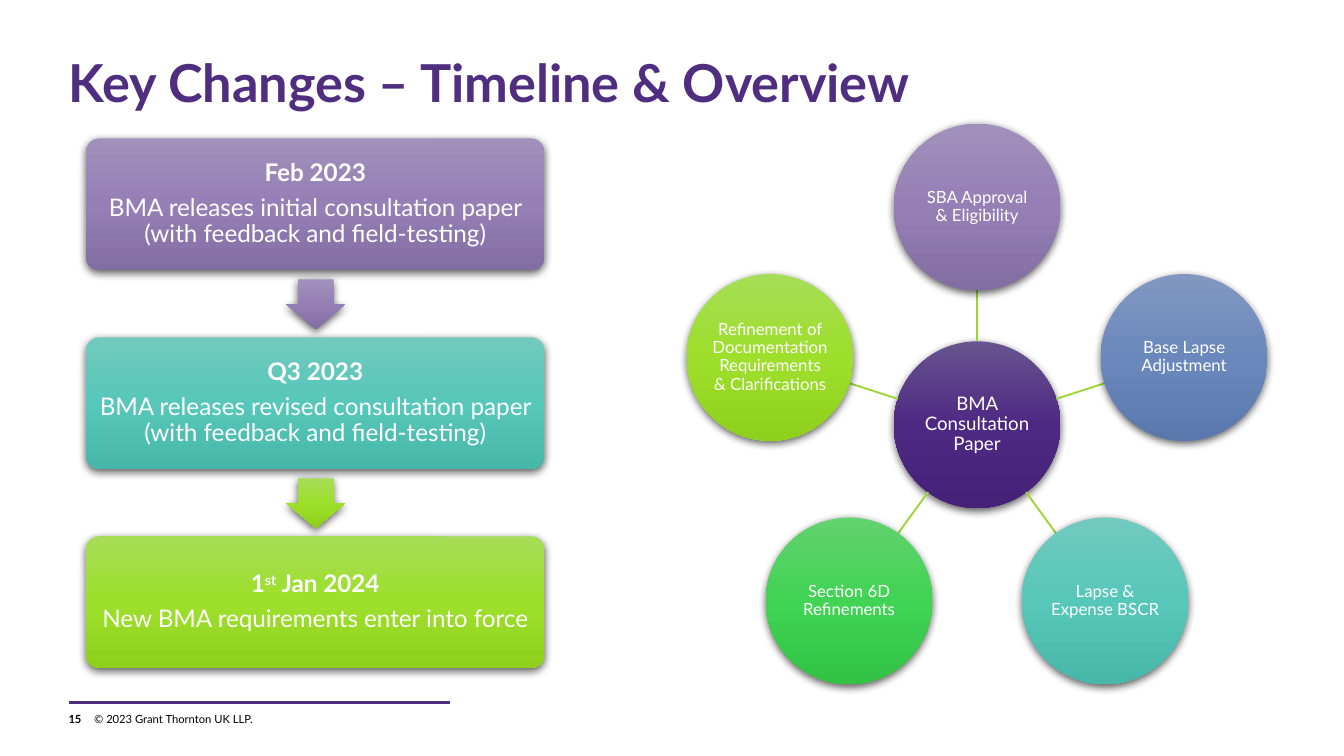
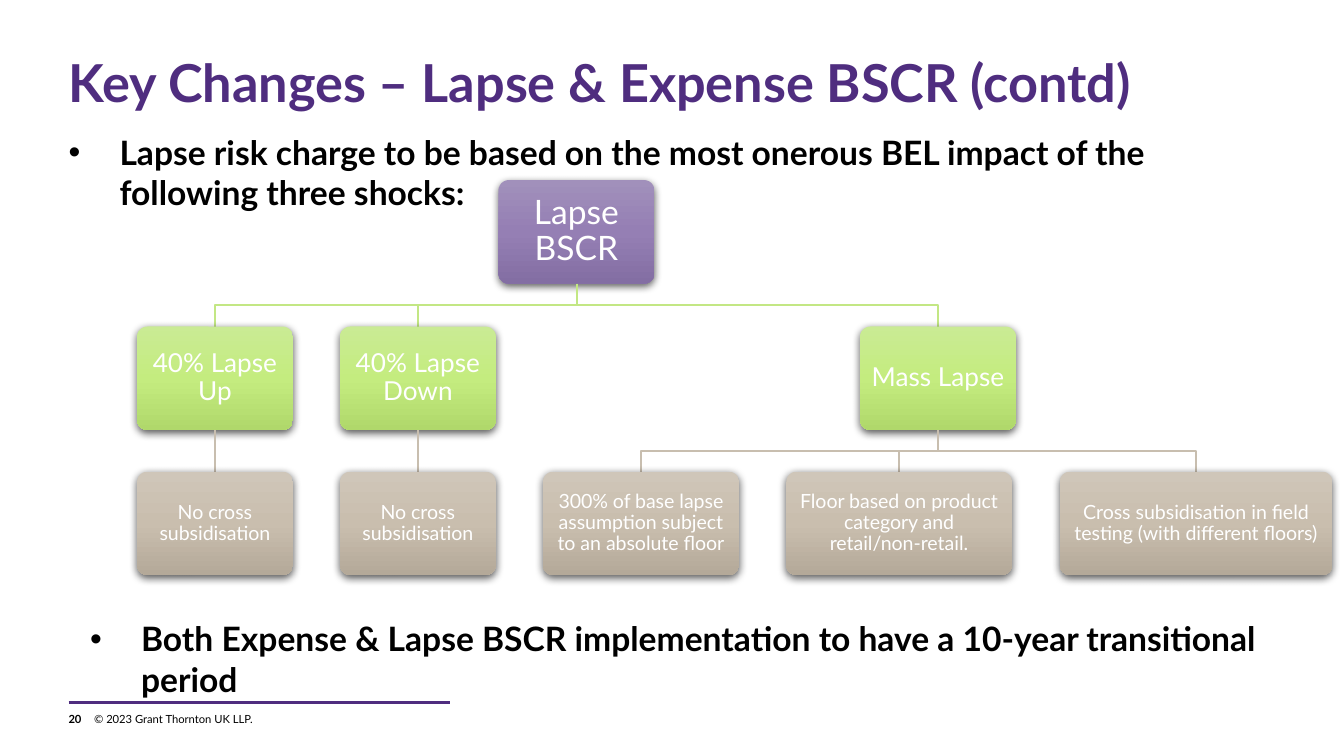
from copy import deepcopy
from math import cos, radians, sin

from lxml.etree import SubElement
from pptx import Presentation
from pptx.dml.color import RGBColor
from pptx.enum.shapes import MSO_CONNECTOR as Connector, MSO_SHAPE as Shape
from pptx.enum.text import MSO_ANCHOR as Anchor, PP_ALIGN as Align
from pptx.oxml.ns import qn
from pptx.util import Inches, Pt

FONT = "Lato"
BRAND = RGBColor(0x4F, 0x2D, 0x7F)
BLACK = RGBColor(0, 0, 0)
WHITE = RGBColor(0xFF, 0xFF, 0xFF)
LINK_GREEN = RGBColor(0x9B, 0xD7, 0x32)
LINK_LIGHT_GREEN = RGBColor(0xC3, 0xE7, 0x84)
LINK_SAND = RGBColor(0xC8, 0xBE, 0xAF)


def gradient(*codes):
    return [RGBColor.from_string(code) for code in codes]


DEEP_PURPLE = gradient("68548F", "4E2983", "452178")
PURPLE = gradient("A190BB", "957FB4", "836EA3")
BLUE = gradient("8197C1", "6B88BD", "5B78AC")
TEAL = gradient("72C9BF", "57C7BA", "47B7AA")
GREEN = gradient("63D26F", "41D353", "32C344")
LIME = gradient("A6DD57", "9DDF2A", "8ED01C")
LIGHT_LIME = gradient("CAEB94", "C4EC7F", "B0D86B")
SAND = gradient("CFC6B9", "C9BEAE", "B4A999")


def apply(target, formats):
    for name, value in formats.items():
        setattr(target, name, value)


def box(*lengths):
    return [Inches(length) for length in lengths]


def set_frame(frame, inset, anchor=Anchor.TOP):
    sides = ("left", "top", "right", "bottom")
    apply(frame, {f"margin_{side}": Inches(inset) for side in sides})
    apply(frame, {"word_wrap": True, "vertical_anchor": anchor})


def add_run(paragraph, text, size, color, bold=False, baseline=0):
    run = paragraph.add_run()
    run.text = text
    apply(run.font, {"name": FONT, "size": Pt(size), "bold": bold})
    run.font.color.rgb = color
    if baseline:
        run.font._element.set("baseline", str(baseline * 1000))


def add_text(slide, place, text, size, color=BLACK, bold=False, inset=0):
    """Add a text box with one paragraph, which is returned."""
    frame = slide.shapes.add_textbox(*box(*place)).text_frame
    set_frame(frame, inset)
    paragraph = frame.paragraphs[0]
    add_run(paragraph, text, size, color, bold)
    return paragraph


def add_bullet(slide, place, text, inset=0):
    paragraph = add_text(slide, place, text, 18, bold=True, inset=inset)
    properties = paragraph._p.get_or_add_pPr()
    properties.set("marL", str(Inches(0.38)))
    properties.set("indent", str(-Inches(0.38)))
    SubElement(properties, qn("a:buFont"), typeface="Arial")
    SubElement(properties, qn("a:buChar"), char="•")


def add_line(slide, start, end, color, width=1):
    line = slide.shapes.add_connector(Connector.STRAIGHT, *box(*start, *end))
    line.line.color.rgb = color
    line.line.width = Pt(width)
    SubElement(line._element.spPr, qn("a:effectLst"))


def add_elbow(slide, start, end, color):
    """Link a parent's foot to a child's head through their middle height."""
    if start[0] == end[0]:
        add_line(slide, start, end, color)
        return
    middle = (start[1] + end[1]) / 2
    builder = slide.shapes.build_freeform(*box(*start))
    corners = [(start[0], middle), (end[0], middle), end]
    builder.add_line_segments([box(*corner) for corner in corners], close=False)
    elbow = builder.convert_to_shape()
    elbow.shadow.inherit = False
    elbow.fill.background()
    elbow.line.color.rgb = color
    elbow.line.width = Pt(1)


def add_glossy(slide, kind, place, colors, adjustments=()):
    """Add a shape with a vertical three-colour gradient and a soft shadow."""
    shape = slide.shapes.add_shape(kind, *box(*place))
    for index, value in enumerate(adjustments):
        shape.adjustments[index] = value
    shape.line.fill.background()
    shape.fill.gradient()
    shape.fill.gradient_angle = 270
    properties = shape._element.spPr
    stops = properties.find(".//" + qn("a:gsLst"))
    stops.append(deepcopy(stops[-1]))
    for stop, color, position in zip(shape.fill.gradient_stops, colors, (0, 0.5, 1)):
        stop.color.rgb = color
        stop.position = position
    shape.shadow.inherit = False
    shadow = SubElement(properties.find(qn("a:effectLst")), qn("a:outerShdw"),
                        blurRad=str(Pt(4.5)), dist=str(Pt(1.5)),
                        dir="5400000", rotWithShape="0")
    black = SubElement(shadow, qn("a:srgbClr"), val="000000")
    SubElement(black, qn("a:alpha"), val="63000")
    return shape


def write_label(shape, paragraphs, size, inset):
    """Fill a shape with centred paragraphs, each a list of run tuples."""
    frame = shape.text_frame
    set_frame(frame, inset, Anchor.MIDDLE)
    for index, runs in enumerate(paragraphs):
        paragraph = frame.add_paragraph() if index else frame.paragraphs[0]
        apply(paragraph, {"alignment": Align.CENTER, "line_spacing": 0.9,
                          "space_after": Pt(0)})
        space = paragraph._p.pPr.find(qn("a:spcAft"))
        space.remove(space[0])
        SubElement(space, qn("a:spcPct"), val="35000")
        for text, *style in runs:
            add_run(paragraph, text, size, WHITE, *style)


def add_card(slide, place, colors, paragraphs, size, inset=0.05):
    card = add_glossy(slide, Shape.ROUNDED_RECTANGLE, place, colors, [0.1])
    write_label(card, paragraphs, size, inset)


def add_slide(presentation, title, number):
    """Add a slide with its title, footer rule, page number and copyright."""
    slide = presentation.slides.add_slide(presentation.slide_layouts[6])
    add_text(slide, (0.7, 5.3, 4.31, 0.1), "© 2023 Grant Thornton UK LLP.", 6)
    add_line(slide, (0.51, 5.23), (3.35, 5.23), BRAND, 1.5)
    heading = add_text(slide, (0.51, 0.43, 8.98, 0.87), title, 28, BRAND, True)
    heading.line_spacing = 0.9
    add_text(slide, (0.51, 5.3, 0.18, 0.1), str(number), 6, bold=True)
    return slide


def add_timeline(slide):
    steps = [
        (PURPLE, [("Feb 2023", True)],
         "BMA releases initial consultation paper (with feedback and field-testing)"),
        (TEAL, [("Q3 2023", True)],
         "BMA releases revised consultation paper (with feedback and field-testing)"),
        (LIME, [("1", True), ("st", True, 30), (" Jan 2024", True)],
         "New BMA requirements enter into force"),
    ]
    arrow_colors = [PURPLE, LIME]
    for index, (colors, date, event) in enumerate(steps):
        top = 1.03 + 1.48 * index
        add_card(slide, (0.64, top, 3.41, 0.98), colors, [date, [(event,)]], 13)
        if index < len(arrow_colors):
            add_glossy(slide, Shape.DOWN_ARROW, (2.13, top + 1.05, 0.44, 0.37),
                       arrow_colors[index], [0.6, 0.5])


def add_hub(slide):
    """Draw the consultation paper with its topics on a circle around it."""
    center_x, center_y, radius, orbit = 7.27, 3.16, 0.62, 1.62
    topics = [
        ("SBA Approval & Eligibility", PURPLE),
        ("Base Lapse Adjustment", BLUE),
        ("Lapse & Expense BSCR", TEAL),
        ("Section 6D Refinements", GREEN),
        ("Refinement of Documentation Requirements & Clarifications", LIME),
    ]

    def point(angle, distance):
        return (center_x + distance * cos(angle), center_y + distance * sin(angle))

    def add_disc(center, colors, text, size):
        place = (center[0] - radius, center[1] - radius, 2 * radius, 2 * radius)
        disc = add_glossy(slide, Shape.OVAL, place, colors)
        write_label(disc, [[(text,)]], size, 0.01)

    add_disc((center_x, center_y), DEEP_PURPLE, "BMA Consultation Paper", 10)
    for index, (text, colors) in enumerate(topics):
        angle = radians(360 / len(topics) * index - 90)
        add_line(slide, point(angle, radius), point(angle, orbit - radius), LINK_GREEN)
        add_disc(point(angle, orbit), colors, text, 9)


def add_shock_tree(slide):
    width, height = 1.16, 0.77
    root_x, root_top, shock_top, detail_top = 4.29, 1.34, 2.43, 3.51
    shocks = [
        ("40% Lapse Up", 1.6, [("No cross subsidisation", 1.6, width)]),
        ("40% Lapse Down", 3.11, [("No cross subsidisation", 3.11, width)]),
        ("Mass Lapse", 6.98, [
            ("300% of base lapse assumption subject to an absolute floor", 4.77, 1.46),
            ("Floor based on product category and retail/non-retail.", 6.69, 1.68),
            ("Cross subsidisation in field testing (with different floors)", 8.9, 2.03),
        ]),
    ]

    def add_node(text, center, top, node_width, colors, size, inset):
        place = (center - node_width / 2, top, node_width, height)
        add_card(slide, place, colors, [[(text,)]], size, inset)

    add_node("Lapse BSCR", root_x, root_top, width, PURPLE, 18, 0.07)
    for shock, shock_x, details in shocks:
        add_elbow(slide, (root_x, root_top + height), (shock_x, shock_top),
                  LINK_LIGHT_GREEN)
        add_node(shock, shock_x, shock_top, width, LIGHT_LIME, 14, 0.06)
        for detail, detail_x, detail_width in details:
            add_elbow(slide, (shock_x, shock_top + height), (detail_x, detail_top),
                      LINK_SAND)
            add_node(detail, detail_x, detail_top, detail_width, SAND, 10.5, 0.05)


def main():
    presentation = Presentation()
    presentation.slide_width = Inches(10)
    presentation.slide_height = Inches(10) * 9 // 16

    overview = add_slide(presentation, "Key Changes – Timeline & Overview", 15)
    add_hub(overview)
    add_timeline(overview)

    lapse = add_slide(presentation, "Key Changes – Lapse & Expense BSCR (contd)", 20)
    add_bullet(lapse, (0.51, 0.98, 8.98, 3.66),
               "Lapse risk charge to be based on the most onerous BEL impact of the "
               "following three shocks:")
    add_shock_tree(lapse)
    add_bullet(lapse, (0.6, 4.53, 9.25, 0.71),
               "Both Expense & Lapse BSCR implementation to have a 10-year "
               "transitional period", inset=0.07)

    presentation.save("out.pptx")


if __name__ == "__main__":
    main()
